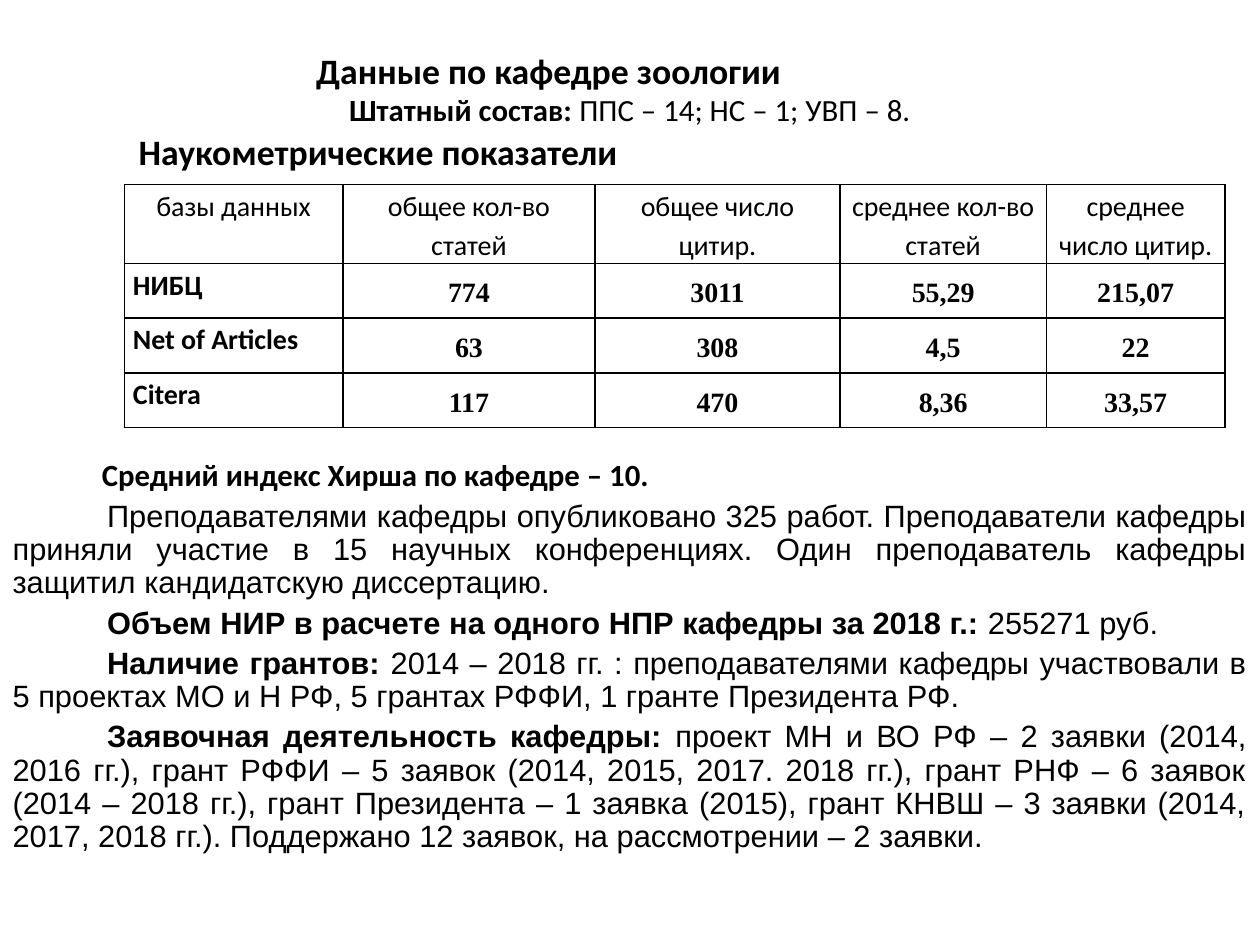
from lxml import etree
from pptx import Presentation
from pptx.dml.color import RGBColor
from pptx.enum import text
from pptx.oxml import ns
from pptx.util import Pt

BLACK = RGBColor(0, 0, 0)
ALIGN = text.PP_ALIGN
ANCHOR = text.MSO_ANCHOR


class ReportSlide:
    heading_font = "Calibri"
    prose_font = "Arial"
    figure_font = "Times New Roman"
    heading_size = 20.4
    text_size = 17.6
    table_size = 16

    def __init__(self, deck):
        self.slide = deck.slides.add_slide(deck.slide_layouts[1])
        self.body_started = False

    def style(self, run, font, size, bold):
        run.font.name = font
        run.font.size = Pt(size)
        run.font.bold = bold
        run.font.color.rgb = BLACK

    def place(self, holder, left, top, width, height, side):
        holder.left, holder.top = Pt(left), Pt(top)
        holder.width, holder.height = Pt(width), Pt(height)
        frame = holder.text_frame
        frame.word_wrap = True
        frame.auto_size = text.MSO_AUTO_SIZE.NONE
        frame.margin_left = frame.margin_right = Pt(side)
        frame.margin_top = frame.margin_bottom = 0
        return frame

    def title(self, heading, left, top, width, height):
        frame = self.place(self.slide.shapes.title, left, top, width, height, 0)
        frame.vertical_anchor = ANCHOR.MIDDLE
        frame.text = heading
        line = frame.paragraphs[0]
        line.alignment = ALIGN.CENTER
        self.style(line.runs[0], self.heading_font, self.heading_size, True)

    def body(self, left, top, width, height):
        self.body_frame = self.place(self.slide.placeholders[1], left, top, width, height, 7.2)
        self.body_frame.vertical_anchor = ANCHOR.TOP

    def paragraph(self, lead, rest="", font=prose_font, size=text_size,
                  align=ALIGN.JUSTIFY, indent=54, before=4):
        frame = self.body_frame
        line = frame.add_paragraph() if self.body_started else frame.paragraphs[0]
        self.body_started = True
        line.text = lead or rest
        self.style(line.runs[0], font, size, bool(lead))
        if lead and rest:
            tail = line.add_run()
            tail.text = rest
            self.style(tail, font, size, False)
        line.alignment = align
        line.line_spacing = 0.9
        line.space_before = Pt(before)
        line.space_after = Pt(0)
        properties = line._p.get_or_add_pPr()
        properties.set("marL", "0")
        properties.set("indent", str(Pt(indent)))
        etree.SubElement(properties, ns.qn("a:buNone"))

    def border(self, cell):
        properties = cell._tc.get_or_add_tcPr()
        for position, side in enumerate(("a:lnL", "a:lnR", "a:lnT", "a:lnB")):
            edge = etree.Element(ns.qn(side), w=str(Pt(1)))
            fill = etree.SubElement(edge, ns.qn("a:solidFill"))
            etree.SubElement(fill, ns.qn("a:srgbClr"), val=str(BLACK))
            properties.insert(position, edge)

    def cell(self, cell, value, font, bold, align, anchor):
        cell.text = value
        cell.fill.background()
        cell.margin_left = cell.margin_right = Pt(5)
        cell.margin_top = cell.margin_bottom = 0
        cell.vertical_anchor = anchor
        line = cell.text_frame.paragraphs[0]
        line.alignment = align
        line.line_spacing = 1.15
        self.style(line.runs[0], font, self.table_size, bold)
        self.border(cell)

    def table(self, rows, left, top, widths, heights):
        table = self.slide.shapes.add_table(
            len(rows), len(widths), Pt(left), Pt(top), Pt(sum(widths)), Pt(sum(heights))).table
        table.first_row = table.horz_banding = False
        for column, width in zip(table.columns, widths):
            column.width = Pt(width)
        for row, height in zip(table.rows, heights):
            row.height = Pt(height)
        for r, values in enumerate(rows):
            for c, value in enumerate(values):
                if r == 0:
                    look = self.heading_font, False, ALIGN.CENTER, ANCHOR.TOP
                elif c == 0:
                    look = self.heading_font, True, ALIGN.JUSTIFY, ANCHOR.TOP
                else:
                    look = self.figure_font, True, ALIGN.CENTER, ANCHOR.MIDDLE
                self.cell(table.cell(r, c), value, *look)


INDICATORS = [
    ("базы данных", "общее кол-во статей", "общее число цитир.",
     "среднее кол-во статей", "среднее число цитир."),
    ("НИБЦ", "774", "3011", "55,29", "215,07"),
    ("Net of Articles", "63", "308", "4,5", "22"),
    ("Citera", "117", "470", "8,36", "33,57"),
]

ACTIVITIES = [
    ("", "Преподавателями кафедры опубликовано 325 работ. Преподаватели кафедры приняли "
         "участие в 15 научных конференциях. Один преподаватель кафедры защитил "
         "кандидатскую диссертацию."),
    ("Объем НИР в расчете на одного НПР кафедры за 2018 г.: ", "255271 руб."),
    ("Наличие грантов: ", "2014 – 2018 гг. : преподавателями кафедры участвовали в "
                          "5 проектах МО и Н РФ, 5 грантах РФФИ, 1 гранте Президента РФ."),
    ("Заявочная деятельность кафедры: ",
     "проект МН и ВО РФ – 2 заявки (2014, 2016 гг.), грант РФФИ – 5 заявок "
     "(2014, 2015, 2017. 2018 гг.), грант РНФ – 6 заявок (2014 – 2018 гг.), "
     "грант Президента – 1 заявка (2015), грант КНВШ – 3 заявки (2014, 2017, 2018 гг.). "
     "Поддержано 12 заявок, на рассмотрении – 2 заявки."),
]


def main():
    deck = Presentation()
    deck.slide_width, deck.slide_height = Pt(720), Pt(540)
    report = ReportSlide(deck)
    heading = report.heading_font
    report.title("Данные по кафедре зоологии", 0, 28, 627, 24)
    report.body(0, 54, 720, 486)
    report.paragraph("Штатный состав:", " ППС – 14; НС – 1; УВП – 8.", heading,
                     align=ALIGN.CENTER, indent=0, before=0)
    report.paragraph("Наукометрические показатели", font=heading,
                     size=report.heading_size, align=ALIGN.LEFT, indent=72)
    report.paragraph("Средний индекс Хирша по кафедре – 10.", font=heading,
                     align=ALIGN.LEFT, indent=51, before=164)
    for lead, rest in ACTIVITIES:
        report.paragraph(lead, rest)
    report.table(INDICATORS, 71, 105.5, (125, 144, 140, 118, 102), (45, 31.3, 31.3, 31.3))
    deck.save("out.pptx")


if __name__ == "__main__":
    main()
